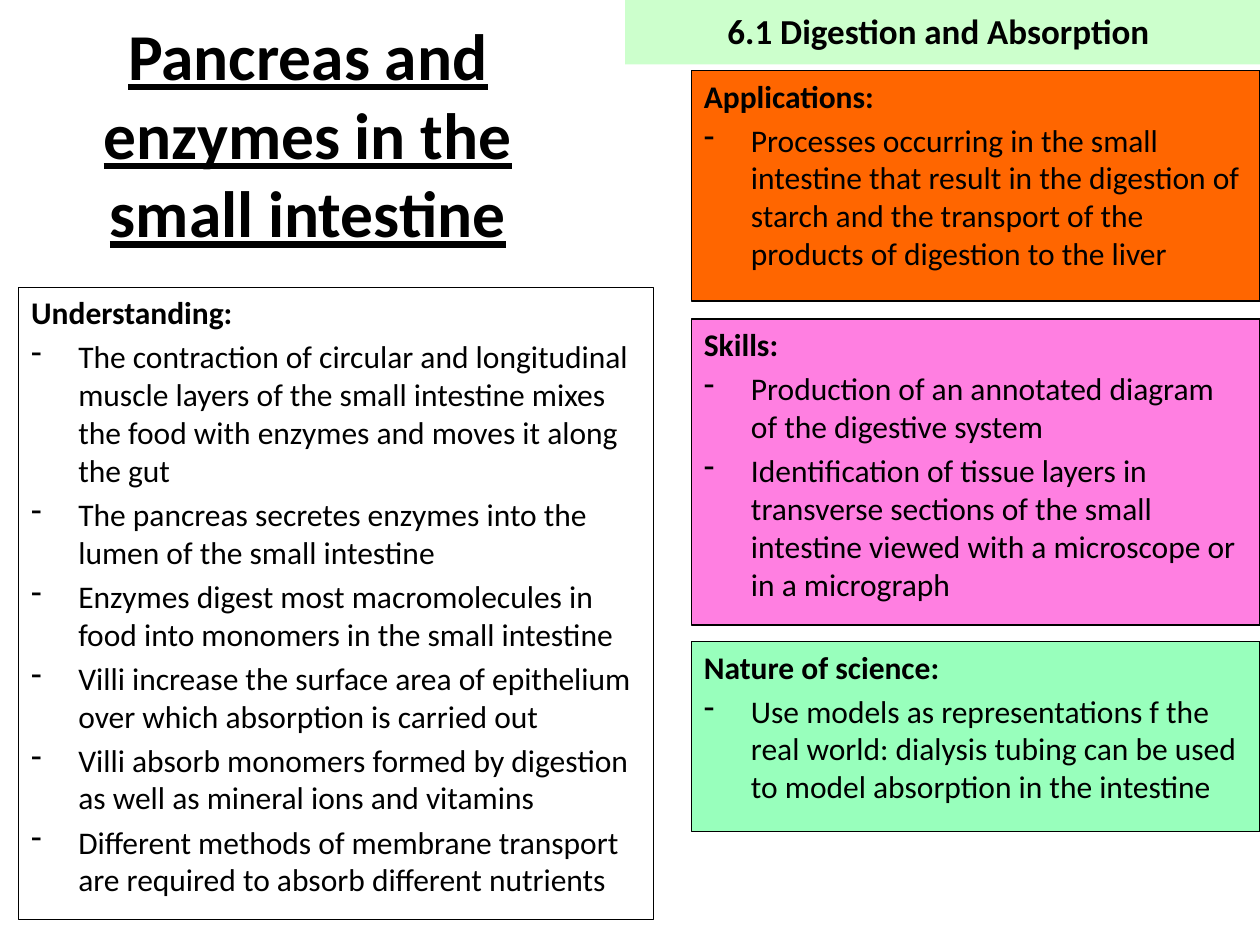
from lxml.etree import SubElement
from pptx import Presentation
from pptx.dml.color import RGBColor
from pptx.enum.shapes import MSO_SHAPE as Shape
from pptx.enum.text import MSO_ANCHOR as Anchor, MSO_AUTO_SIZE as AutoSize, PP_ALIGN as Align
from pptx.oxml.ns import qn
from pptx.util import Cm, Pt

BLACK = "000000"
RIGHT_COLUMN, RIGHT_WIDTH = 13.94, 11.46

UNDERSTANDING = [
    "The contraction of circular and longitudinal muscle layers of the small "
    "intestine mixes the food with enzymes and moves it along the gut",
    "The pancreas secretes enzymes into the lumen of the small intestine",
    "Enzymes digest most macromolecules in food into monomers in the small intestine",
    "Villi increase the surface area of epithelium over which absorption is carried out",
    "Villi absorb monomers formed by digestion as well as mineral ions and vitamins",
    "Different methods of membrane transport are required to absorb different nutrients",
]
APPLICATIONS = [
    "Processes occurring in the small intestine that result in the digestion of "
    "starch and the transport of the products of digestion to the liver",
]
SKILLS = [
    "Production of an annotated diagram of the digestive system",
    "Identification of tissue layers in transverse sections of the small "
    "intestine viewed with a microscope or in a micrograph",
]
NATURE_OF_SCIENCE = [
    "Use models as representations f the real world: dialysis tubing can be "
    "used to model absorption in the intestine",
]


def color(hex_code):
    return RGBColor.from_string(hex_code)


def add_run(paragraph, text, size, bold=False, underline=False):
    run = paragraph.add_run()
    run.text = text
    font = run.font
    font.name, font.size = "Calibri", Pt(size)
    font.bold, font.underline = bold, underline
    font.color.rgb = color(BLACK)


def prepare_frame(shape, anchor):
    frame = shape.text_frame
    frame.word_wrap = True
    frame.auto_size = AutoSize.NONE
    frame.vertical_anchor = anchor
    return frame


def add_dash(paragraph):
    """Give the paragraph a hanging dash bullet."""
    properties = paragraph._p.get_or_add_pPr()
    properties.set("marL", str(Cm(0.95)))
    properties.set("indent", str(-Cm(0.95)))
    SubElement(properties, qn("a:buChar"), char="-")


def format_title(slide, text):
    title = slide.shapes.title
    title.left, title.top = Cm(12.6), Cm(-0.05)
    title.width, title.height = Cm(12.8), Cm(1.35)
    title.fill.solid()
    title.fill.fore_color.rgb = color("CCFFCC")
    paragraph = prepare_frame(title, Anchor.MIDDLE).paragraphs[0]
    paragraph.alignment = Align.CENTER
    add_run(paragraph, text, 20, bold=True)


def add_topic(slide, text):
    box = slide.shapes.add_textbox(Cm(0.38), Cm(0.64), Cm(11.66), Cm(4.09))
    paragraph = prepare_frame(box, Anchor.MIDDLE).paragraphs[0]
    paragraph.alignment = Align.CENTER
    add_run(paragraph, text, 37.4, bold=True, underline=True)


def add_panel(slide, left, top, width, height, fill, heading, points):
    panel = slide.shapes.add_shape(Shape.RECTANGLE, Cm(left), Cm(top), Cm(width), Cm(height))
    panel.shadow.inherit = False
    if fill:
        panel.fill.solid()
        panel.fill.fore_color.rgb = color(fill)
    else:
        panel.fill.background()
    panel.line.color.rgb = color(BLACK)
    panel.line.width = Pt(0.75)

    frame = prepare_frame(panel, Anchor.TOP)
    add_run(frame.paragraphs[0], heading, 18, bold=True)
    for point in points:
        paragraph = frame.add_paragraph()
        add_dash(paragraph)
        add_run(paragraph, point, 18)
    for paragraph in frame.paragraphs:
        paragraph.alignment = Align.LEFT
        paragraph.space_before = Pt(3.6)


def main():
    presentation = Presentation()
    presentation.slide_width, presentation.slide_height = Cm(25.4), Cm(19.05)
    slide = presentation.slides.add_slide(presentation.slide_layouts.get_by_name("Title Only"))

    format_title(slide, "6.1 Digestion and Absorption ")
    add_panel(slide, 0.38, 5.79, 12.8, 12.75, None, "Understanding:", UNDERSTANDING)
    for top, height, fill, heading, points in [
        (1.42, 4.65, "FF6600", "Applications:", APPLICATIONS),
        (6.43, 6.17, "FF7FE1", "Skills:", SKILLS),
        (12.93, 3.84, "98FFBC", "Nature of science:", NATURE_OF_SCIENCE),
    ]:
        add_panel(slide, RIGHT_COLUMN, top, RIGHT_WIDTH, height, fill, heading, points)
    add_topic(slide, "Pancreas and enzymes in the small intestine")

    presentation.save("out.pptx")


if __name__ == "__main__":
    main()
